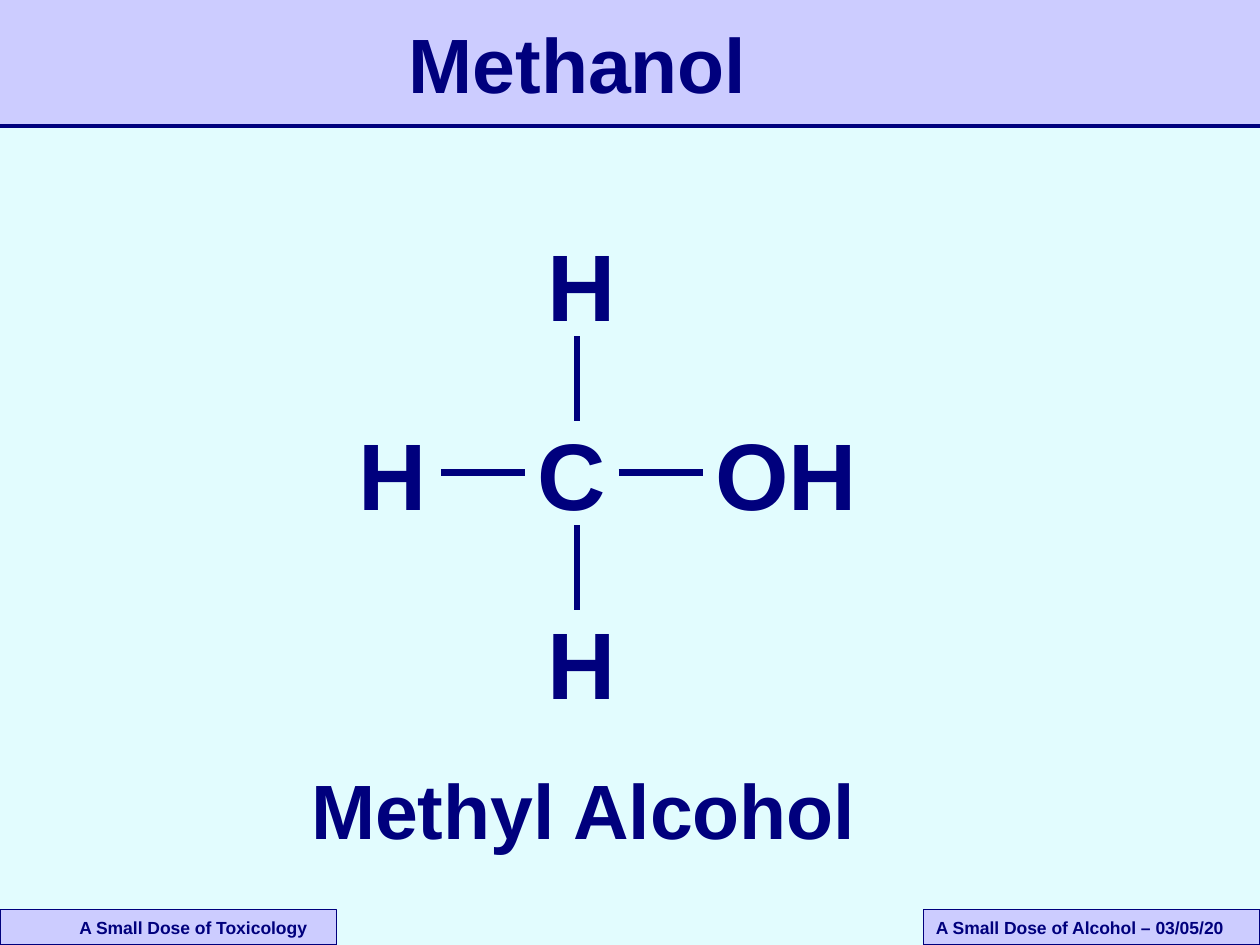
import pptx
import pptx.dml.color
import pptx.enum.shapes
import pptx.enum.text
import pptx.oxml
import pptx.util
from pptx.util import Inches

NAVY = "00007D"
LAVENDER = "CCCCFF"
PALE_CYAN = "E2FCFE"
LEFT_SIDE, RIGHT_SIDE = 1, 3


def color(hex_string):
    return pptx.dml.color.RGBColor.from_string(hex_string)


def write(shape, text, size, align=pptx.enum.text.PP_ALIGN.LEFT, wrap=True):
    """Put one bold navy paragraph into a shape."""
    frame = shape.text_frame
    frame.word_wrap = wrap
    frame.margin_left = frame.margin_right = Inches(0.1)
    frame.margin_top = frame.margin_bottom = Inches(0.05)
    paragraph = frame.paragraphs[0]
    paragraph.text = text
    paragraph.alignment = align
    font = paragraph.font
    font.name, font.size, font.bold = "Arial", pptx.util.Pt(size), True
    font.color.rgb = color(NAVY)


def add_label(slide, left, top, width, height, text, size, wrap=True):
    label = slide.shapes.add_textbox(left, top, width, height)
    write(label, text, size, wrap=wrap)
    return label


def add_panel(slide, left, top, width, height):
    panel = slide.shapes.add_shape(
        pptx.enum.shapes.MSO_SHAPE.RECTANGLE, left, top, width, height)
    panel.shadow.inherit = False
    panel.fill.solid()
    panel.fill.fore_color.rgb = color(LAVENDER)
    panel.line.fill.background()
    return panel


def add_line(slide, start_x, start_y, end_x, end_y, weight):
    line = slide.shapes.add_connector(
        pptx.enum.shapes.MSO_CONNECTOR.STRAIGHT, start_x, start_y, end_x, end_y)
    line.line.color.rgb = color(NAVY)
    line.line.width = pptx.util.Pt(weight)
    properties = line._element.spPr
    properties.append(properties.makeelement(pptx.oxml.ns.qn("a:effectLst"), {}))
    return line


def add_header(slide, left, top, width, height, text):
    add_panel(slide, left, top, width, height)
    add_line(slide, left, top + height, left + width, top + height, 2)
    title = slide.shapes.title
    title.left, title.top = left + Inches(1.25), top + Inches(0.08)
    title.width, title.height = Inches(6.67), Inches(0.83)
    title.text_frame.vertical_anchor = pptx.enum.text.MSO_ANCHOR.MIDDLE
    write(title, text, 44, pptx.enum.text.PP_ALIGN.CENTER)


def add_footer(slide, left, top, width, height, text, indent):
    footer = add_panel(slide, left, top, width, height)
    footer.line.color.rgb = color(NAVY)
    footer.line.width = pptx.util.Pt(0.75)
    footer.text_frame.vertical_anchor = pptx.enum.text.MSO_ANCHOR.MIDDLE
    write(footer, text, 10)
    footer.text_frame.margin_left = indent


def add_molecule(slide, left, top):
    """Place a carbon atom with its four neighbours and the bonds between."""
    row_step = Inches(1.5)
    bond_length = Inches(0.67)
    bond_weight = 3.5

    def add_atom(symbol, offset, row, width):
        return add_label(slide, left + Inches(offset), top + row * row_step,
                         Inches(width), Inches(1), symbol, 54)

    carbon = add_atom("C", 1.42, 1, 0.8)
    hydrogen = add_atom("H", 0, 1, 0.75)
    hydroxyl = add_atom("OH", 2.83, 1, 1.33)
    for row in (0, 2):
        add_atom("H", 1.5, row, 0.75)

    middle = carbon.top + carbon.height // 2
    left_bond = add_line(slide, hydrogen.left + hydrogen.width, middle,
                         carbon.left, middle, bond_weight)
    left_bond.begin_connect(hydrogen, RIGHT_SIDE)
    left_bond.end_connect(carbon, LEFT_SIDE)
    right_bond = add_line(slide, hydroxyl.left - bond_length, middle,
                          hydroxyl.left, middle, bond_weight)
    right_bond.end_connect(hydroxyl, LEFT_SIDE)

    bond_x = left + Inches(1.83)
    for row in (0, 1):
        bond_top = top + Inches(0.92) + row * row_step
        add_line(slide, bond_x, bond_top + bond_length, bond_x, bond_top,
                 bond_weight)


def main():
    presentation = pptx.Presentation()
    presentation.slide_width = Inches(10)
    presentation.slide_height = Inches(7.5)
    slide = presentation.slides.add_slide(presentation.slide_layouts[5])
    slide.background.fill.solid()
    slide.background.fill.fore_color.rgb = color(PALE_CYAN)

    page_width, page_height = presentation.slide_width, presentation.slide_height
    add_header(slide, 0, 0, page_width, Inches(1), "Methanol")
    # The title placeholder comes first, so bring it in front of the band.
    slide.shapes._spTree.append(slide.shapes.title._element)

    footer_width, footer_height = Inches(2.67), Inches(0.28)
    footer_top = page_height - footer_height
    add_footer(slide, 0, footer_top, footer_width, footer_height,
               "A Small Dose of Toxicology", Inches(0.63))
    add_footer(slide, page_width - footer_width, footer_top, footer_width,
               footer_height, "A Small Dose of Alcohol – 03/05/20", Inches(0.1))

    add_molecule(slide, Inches(2.75), Inches(1.75))
    add_label(slide, Inches(2.37), Inches(6), Inches(4.55), Inches(0.83),
              "Methyl Alcohol", 44, wrap=False)
    presentation.save("out.pptx")


if __name__ == "__main__":
    main()
